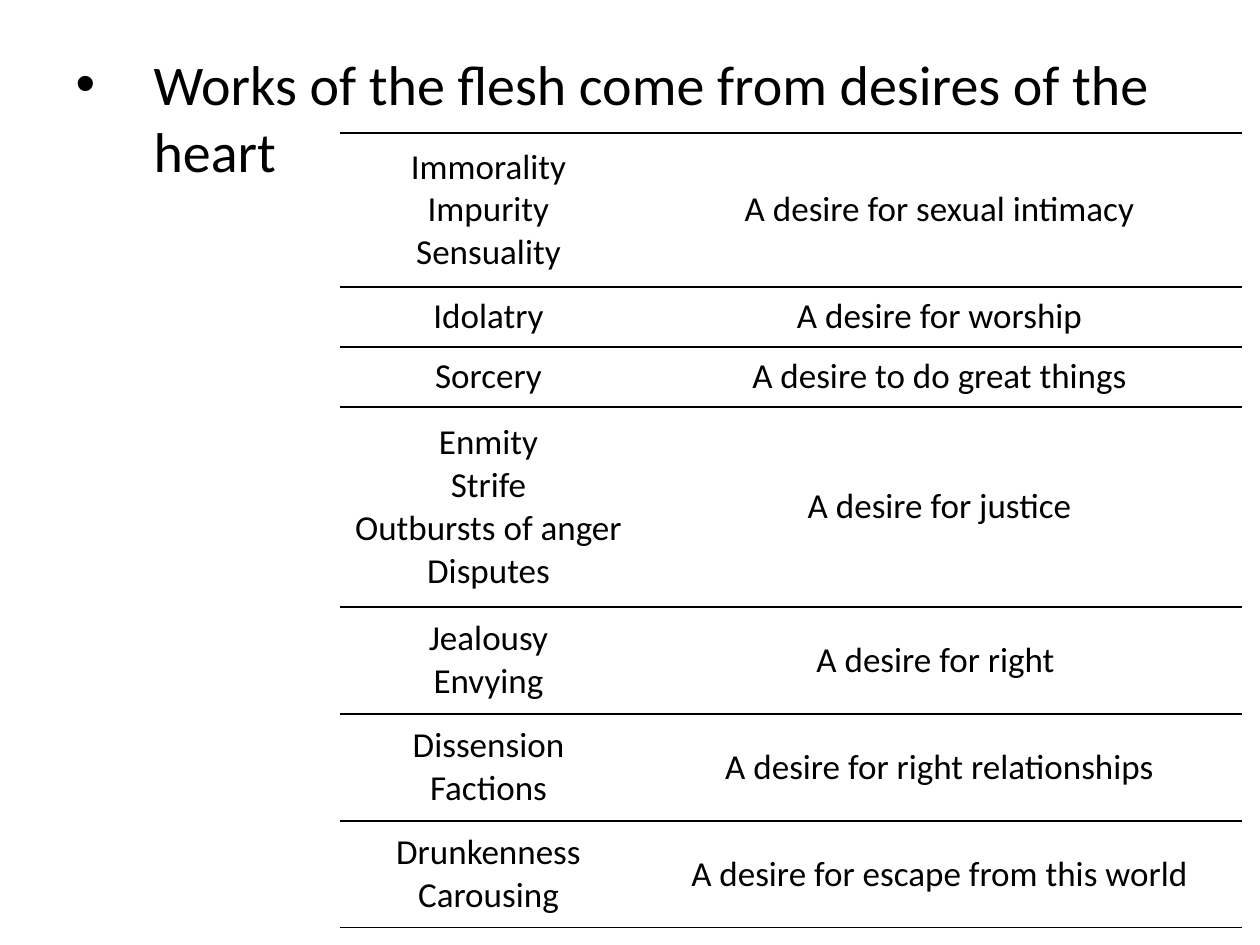
from dataclasses import dataclass

from lxml import etree
from pptx import Presentation
from pptx.dml.color import RGBColor
from pptx.enum.text import MSO_ANCHOR, PP_ALIGN
from pptx.oxml.ns import qn
from pptx.util import Pt

LEFT, CENTER = PP_ALIGN.LEFT, PP_ALIGN.CENTER
MIDDLE = MSO_ANCHOR.MIDDLE
TITLE_ONLY = 5
EMU_PER_PX = 914400 / 126


def px(length):
    return round(length * EMU_PER_PX)


@dataclass(frozen=True)
class Theme:
    font: str = "Calibri"
    ink: str = "000000"
    paper: str = "FFFFFF"
    title_size: int = 32
    cell_size: int = 20
    rule_width: int = 1


class SlideBuilder:
    def __init__(self, slide, theme):
        self.slide = slide
        self.theme = theme
        background = slide.background.fill
        background.solid()
        background.fore_color.rgb = RGBColor.from_string(theme.paper)

    def add_text(self, paragraph, text, size, align):
        paragraph.alignment = align
        run = paragraph.add_run()
        run.text = text
        run.font.name = self.theme.font
        run.font.size = Pt(size)
        run.font.bold = False
        run.font.color.rgb = RGBColor.from_string(self.theme.ink)

    def bullet_title(self, text, left, top, width, height, indent):
        title = self.slide.shapes.title
        title.left, title.top = px(left), px(top)
        title.width, title.height = px(width), px(height)
        frame = title.text_frame
        frame.word_wrap = True
        frame.vertical_anchor = MIDDLE
        paragraph = frame.paragraphs[0]
        properties = paragraph._p.get_or_add_pPr()
        properties.set("marL", str(px(indent)))
        properties.set("indent", str(-px(indent)))
        etree.SubElement(properties, qn("a:buFont"), typeface="Arial")
        etree.SubElement(properties, qn("a:buChar"), char="•")
        self.add_text(paragraph, text, self.theme.title_size, LEFT)

    def rule_cell(self, cell):
        properties = cell._tc.get_or_add_tcPr()
        for position, side in enumerate(("lnL", "lnR", "lnT", "lnB")):
            line = etree.Element(qn(f"a:{side}"), w=str(Pt(self.theme.rule_width)))
            if side in ("lnT", "lnB"):
                fill = etree.SubElement(line, qn("a:solidFill"))
                etree.SubElement(fill, qn("a:srgbClr"), val=self.theme.ink)
            else:
                etree.SubElement(line, qn("a:noFill"))
            properties.insert(position, line)

    def fill_cell(self, cell, lines):
        cell.fill.background()
        cell.vertical_anchor = MIDDLE
        frame = cell.text_frame
        for number, line in enumerate(lines):
            paragraph = frame.add_paragraph() if number else frame.paragraphs[0]
            self.add_text(paragraph, line, self.theme.cell_size, CENTER)
        self.rule_cell(cell)

    def ruled_table(self, rows, left, top, widths, heights):
        table = self.slide.shapes.add_table(
            len(rows), len(widths), px(left), px(top),
            px(sum(widths)), px(sum(heights)),
        ).table
        table.first_row = False
        table.horz_banding = False
        for column, width in zip(table.columns, widths):
            column.width = px(width)
        for table_row, height, contents in zip(table.rows, heights, rows):
            table_row.height = px(height)
            for cell, lines in zip(table_row.cells, contents):
                self.fill_cell(cell, lines)


WORKS_AND_DESIRES = [
    (["Immorality", "Impurity", "Sensuality"], ["A desire for sexual intimacy"]),
    (["Idolatry"], ["A desire for worship"]),
    (["Sorcery"], ["A desire to do great things"]),
    (["Enmity", "Strife", "Outbursts of anger", "Disputes"], ["A desire for justice"]),
    (["Jealousy", "Envying"], ["A desire for right "]),
    (["Dissension", "Factions"], ["A desire for right relationships"]),
    (["Drunkenness", "Carousing"], ["A desire for escape from this world"]),
]
HEIGHT_BY_WORK_COUNT = {1: 60, 2: 107, 3: 154, 4: 200}


def main():
    deck = Presentation()
    deck.slide_width, deck.slide_height = px(1260), px(945)
    slide = deck.slides.add_slide(deck.slide_layouts[TITLE_ONLY])
    builder = SlideBuilder(slide, Theme())
    builder.bullet_title(
        "Works of the flesh come from desires of the heart",
        left=63, top=38, width=1134, height=158, indent=78,
    )
    builder.ruled_table(
        WORKS_AND_DESIRES, left=340, top=133, widths=[297, 605],
        heights=[HEIGHT_BY_WORK_COUNT[len(works)] for works, _ in WORKS_AND_DESIRES],
    )
    deck.save("out.pptx")


if __name__ == "__main__":
    main()
